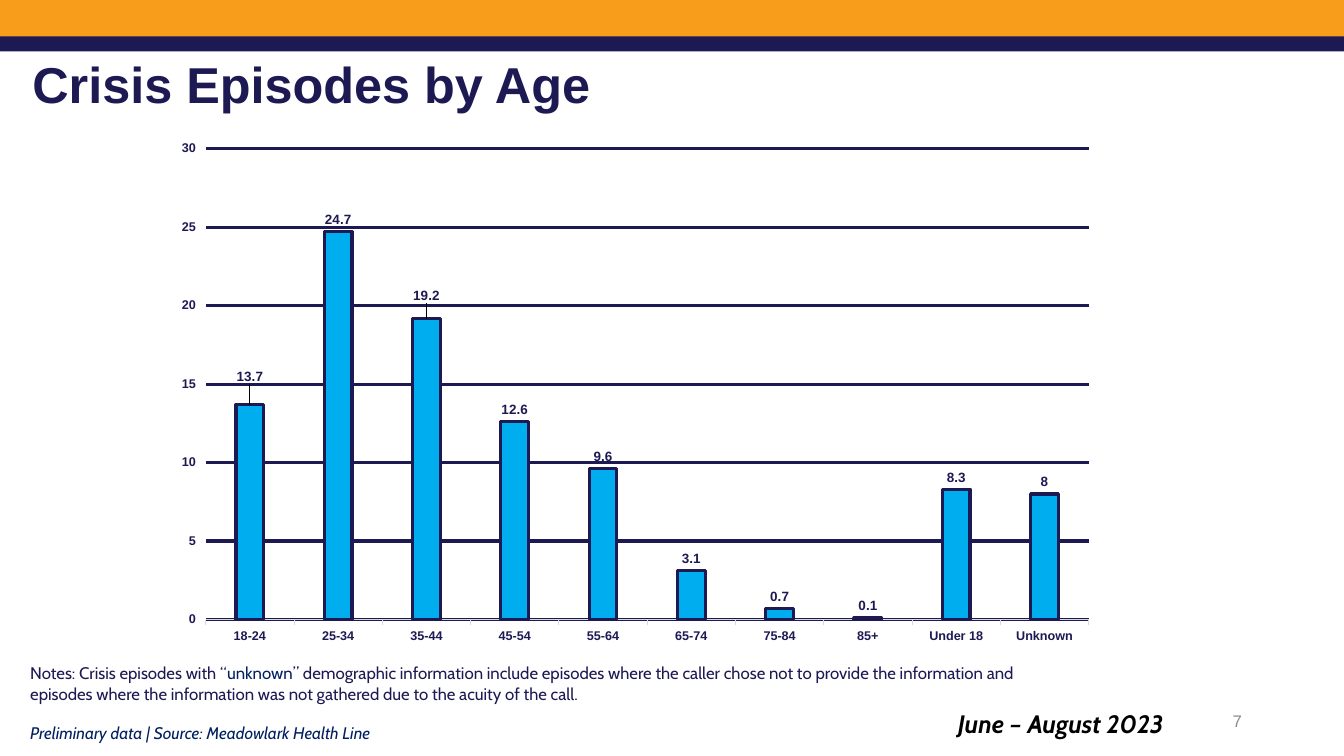
import pptx
import pptx.chart.data
import pptx.dml.color
import pptx.enum.chart
import pptx.enum.shapes
import pptx.enum.text
import pptx.oxml
import pptx.oxml.ns
import pptx.util

Pt = pptx.util.Pt
ALIGN = pptx.enum.text.PP_ALIGN
ANCHOR = pptx.enum.text.MSO_ANCHOR

COLORS = {
    "orange": "F89C1B",
    "navy": "1D1953",
    "blue": "002060",
    "bar": "00ADEE",
    "axis": "D9D9D9",
    "gray": "8C8C8C",
    "black": "000000",
}

EPISODES_BY_AGE = {
    "18-24": 13.7, "25-34": 24.7, "35-44": 19.2, "45-54": 12.6, "55-64": 9.6,
    "65-74": 3.1, "75-84": 0.7, "85+": 0.1, "Under 18": 8.3, "Unknown": 8,
}
# Labels raised above their usual place: point index -> share of chart height
RAISED_LABELS = {0: -0.03, 2: -0.02}


def rgb(name):
    return pptx.dml.color.RGBColor.from_string(COLORS[name])


def style_font(font, size, color, name="Arial", bold=False, italic=False):
    font.name = name
    font.size = Pt(size)
    font.bold = bold
    font.italic = italic
    font.color.rgb = rgb(color)


def add_band(slide, top, height, color):
    band = slide.shapes.add_shape(
        pptx.enum.shapes.MSO_SHAPE.RECTANGLE, 0, Pt(top), Pt(960), Pt(height))
    band.shadow.inherit = False
    band.fill.solid()
    band.fill.fore_color.rgb = rgb(color)
    band.line.fill.background()


def set_frame(shape, margins, anchor=ANCHOR.TOP):
    frame = shape.text_frame
    frame.word_wrap = True
    frame.auto_size = pptx.enum.text.MSO_AUTO_SIZE.NONE
    frame.vertical_anchor = anchor
    (frame.margin_left, frame.margin_top,
     frame.margin_right, frame.margin_bottom) = map(Pt, margins)
    return frame


def set_title(slide, text):
    title = slide.shapes.title
    title.left, title.top, title.width, title.height = map(Pt, (6.5, 36.7, 510, 44.6))
    frame = set_frame(title, (16.6, 1, 0, 0))
    frame.text = text
    paragraph = frame.paragraphs[0]
    paragraph.alignment = ALIGN.LEFT
    paragraph.space_before = Pt(1)
    style_font(paragraph.runs[0].font, 36, "navy", bold=True)


def add_text(slide, box, runs, size, margins=(0.7, 0, 0, 0), anchor=ANCHOR.TOP,
             align=ALIGN.LEFT, before=0, after=0, **style):
    shape = slide.shapes.add_textbox(*map(Pt, box))
    paragraph = set_frame(shape, margins, anchor).paragraphs[0]
    paragraph.alignment = align
    paragraph.space_before = Pt(before)
    paragraph.space_after = Pt(after)
    for text, color in runs:
        run = paragraph.add_run()
        run.text = text
        style_font(run.font, size, color, **style)


def manual_layout(**values):
    children = "".join(f'<c:{tag} val="{value}"/>' for tag, value in values.items())
    return pptx.oxml.parse_xml(
        f'<c:layout {pptx.oxml.ns.nsdecls("c")}>'
        f'<c:manualLayout>{children}</c:manualLayout></c:layout>')


def style_axes(chart):
    category_axis, value_axis = chart.category_axis, chart.value_axis
    for axis in (category_axis, value_axis):
        axis.major_tick_mark = pptx.enum.chart.XL_TICK_MARK.OUTSIDE
        style_font(axis.tick_labels.font, 9, "navy", bold=True)
    category_axis.format.line.color.rgb = rgb("axis")
    category_axis.format.line.width = Pt(0.75)
    value_axis.format.line.fill.background()
    value_axis.minimum_scale, value_axis.maximum_scale = 0, 30
    value_axis.major_unit = 5
    gridline = value_axis.major_gridlines.format.line
    gridline.color.rgb = rgb("navy")
    gridline.width = Pt(2.25)


def style_labels(series):
    outside = pptx.enum.chart.XL_LABEL_POSITION.OUTSIDE_END
    labels = series.data_labels
    labels.show_value = True
    labels.position = outside
    style_font(labels.font, 9.6, "navy", bold=True)
    for index in RAISED_LABELS:
        label = series.points[index].data_label
        label.position = outside
        style_font(label.font, 9.6, "navy", bold=True)
    for element, offset in zip(series._element.xpath(".//c:dLbl"), RAISED_LABELS.values()):
        element.insert(1, manual_layout(x=0, y=offset))


def add_age_chart(slide, box):
    data = pptx.chart.data.CategoryChartData()
    data.categories = list(EPISODES_BY_AGE)
    data.add_series("Series 1", list(EPISODES_BY_AGE.values()))
    chart = slide.shapes.add_chart(
        pptx.enum.chart.XL_CHART_TYPE.COLUMN_CLUSTERED, *map(Pt, box), data).chart
    chart.has_legend = False
    chart.has_title = False
    style_font(chart.font, 10, "black")
    style_axes(chart)

    # Bars
    plot = chart.plots[0]
    plot.gap_width = 219
    plot.overlap = -27
    plot.vary_by_categories = False
    series = plot.series[0]
    series.format.fill.solid()
    series.format.fill.fore_color.rgb = rgb("bar")
    series.format.line.color.rgb = rgb("navy")
    series.format.line.width = Pt(2.25)
    style_labels(series)

    # Inner plot area
    plot_area = chart._chartSpace.chart.plotArea
    for layout in plot_area.xpath("./c:layout"):
        plot_area.remove(layout)
    plot_area.insert(0, manual_layout(
        layoutTarget="inner", xMode="edge", yMode="edge", x=0.045, y=0.032, w=0.935, h=0.9))


def main():
    presentation = pptx.Presentation()
    presentation.slide_width, presentation.slide_height = Pt(960), Pt(540)
    slide = presentation.slides.add_slide(presentation.slide_layouts[5])

    # Header
    add_band(slide, 0, 28.8, "orange")
    add_band(slide, 26, 10.7, "navy")
    set_title(slide, "Crisis Episodes by Age")

    # Chart
    add_age_chart(slide, (116.6, 94.3, 674.6, 373.7))

    # Notes and source
    add_text(slide, (20.9, 473, 717, 31), [
        ("Notes: Crisis episodes with “", "navy"),
        ("unknown", "blue"),
        ("” demographic information include episodes where the caller chose not to "
         "provide the information and episodes where the information was not gathered "
         "due to the acuity of the call.", "navy"),
    ], 12, margins=(0.7, 0.7, 0, 0), before=1, name="Cabin")
    add_text(slide, (20.9, 516.2, 257, 14.4),
             [("Preliminary data | Source: Meadowlark Health Line", "blue")],
             12, name="Cabin", italic=True)

    # Period and page number
    add_text(slide, (673.2, 502.6, 275, 28.8), [("June – August 2023", "black")], 18,
             margins=(11, 3.6, 7.2, 3.6), name="Cabin", bold=True, italic=True)
    add_text(slide, (678.2, 500.4, 216, 28.8), [("7", "gray")], 12,
             margins=(7.2, 3.6, 7.2, 3.6), anchor=ANCHOR.MIDDLE, align=ALIGN.RIGHT, after=6)

    presentation.save("out.pptx")


if __name__ == "__main__":
    main()
